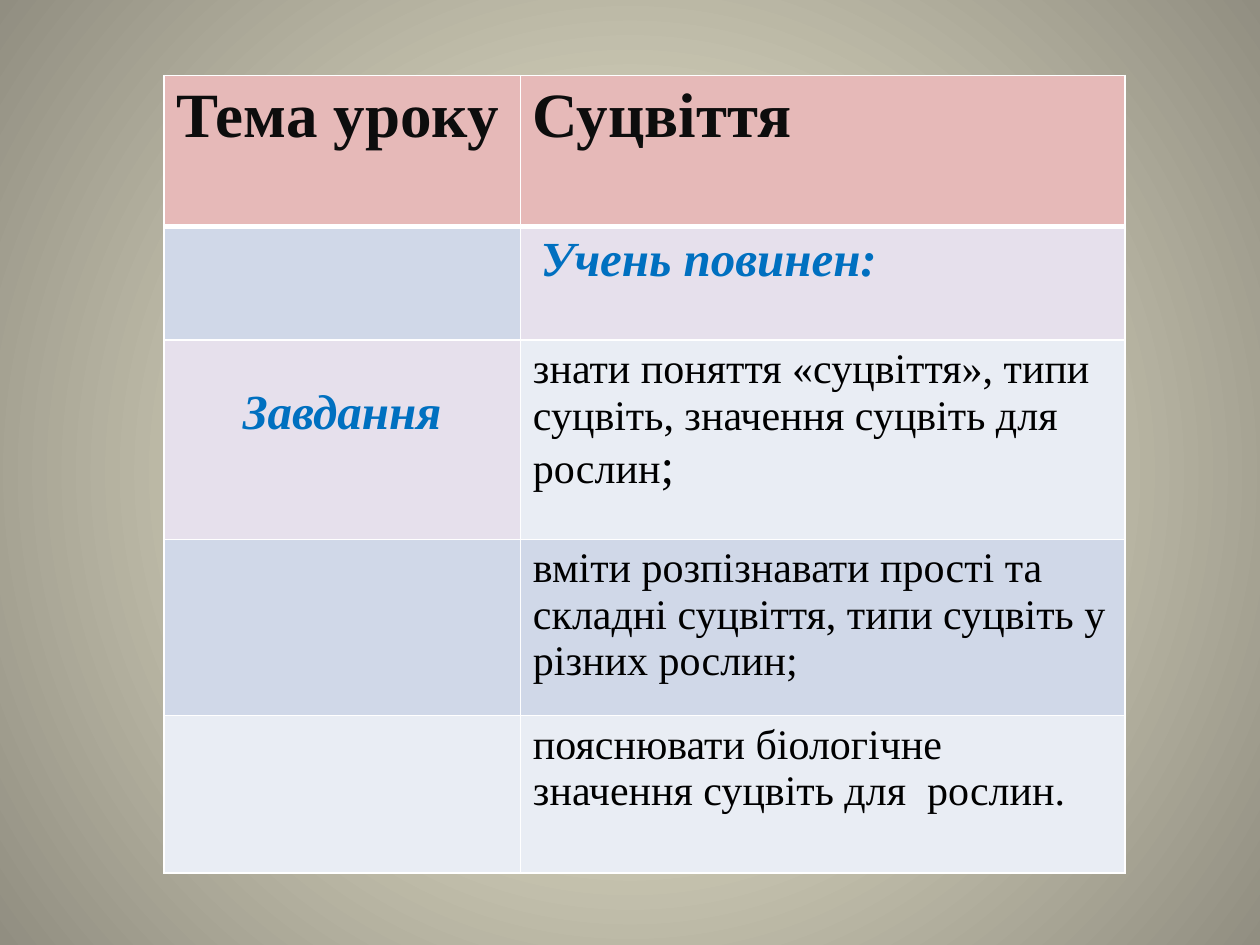
import pptx
import pptx.util
import pptx.dml.color
import pptx.enum.text
import pptx.oxml
import pptx.oxml.ns
from pptx.util import Inches


def color(value):
    return pptx.dml.color.RGBColor.from_string(value)


def add_border(cell, side, width):
    properties = cell._tc.get_or_add_tcPr()
    line = pptx.oxml.parse_xml(
        f'<a:{side} {pptx.oxml.ns.nsdecls("a")} w="{pptx.util.Pt(width)}">'
        '<a:solidFill><a:srgbClr val="FFFFFF"/></a:solidFill>'
        f'</a:{side}>')
    properties.append(line)


deck = pptx.Presentation()
deck.slide_width = Inches(10)
deck.slide_height = Inches(7.5)
page = deck.slides.add_slide(deck.slide_layouts[6])

# Background: radial gradient from the centre
background = page.background.fill
background.gradient()
for stop, position, value in zip(background.gradient_stops, (0, 1), ("FCF7DD", "918E81")):
    stop.position = position
    stop.color.rgb = color(value)
linear = page._element.find(".//" + pptx.oxml.ns.qn("a:lin"))
radial = pptx.oxml.parse_xml(
    f'<a:path {pptx.oxml.ns.nsdecls("a")} path="circle">'
    '<a:fillToRect l="50000" t="50000" r="50000" b="50000"/></a:path>')
linear.getparent().replace(linear, radial)

# Text styles: size, colour, bold, italic
TITLE = (36, "0D0D0D", True, False)
ACCENT = (28, "0070C0", True, True)
BODY = (24, "000000", False, False)
BODY_LARGE = (28, "000000", False, False)

# Each cell: fill, then its runs as (text, style)
rows = [
    [("E6B9B8", [("Тема уроку", TITLE)]), ("E6B9B8", [("Суцвіття", TITLE)])],
    [("D0D8E8", []), ("E6E0EC", [("Учень повинен:", ACCENT)])],
    [("E6E0EC", [("Завдання", ACCENT)]),
     ("E9EDF4", [("знати поняття «суцвіття», типи суцвіть, значення суцвіть для рослин", BODY),
                 (";", BODY_LARGE)])],
    [("D0D8E8", []),
     ("D0D8E8", [("вміти розпізнавати прості та складні суцвіття, типи суцвіть у різних рослин;", BODY)])],
    [("E9EDF4", []),
     ("E9EDF4", [("пояснювати біологічне значення суцвіть для  рослин.", BODY)])],
]
column_widths = [2.83, 4.8]
row_heights = [1.2, 0.9, 1.58, 1.4, 1.25]

# Lesson table
table = page.shapes.add_table(
    len(rows), len(column_widths), Inches(1.3), Inches(0.6),
    Inches(sum(column_widths)), Inches(sum(row_heights))).table
for column, width in zip(table.columns, column_widths):
    column.width = Inches(width)
for row, height in zip(table.rows, row_heights):
    row.height = Inches(height)

for row_index, row in enumerate(rows):
    for column_index, (fill, runs) in enumerate(row):
        cell = table.cell(row_index, column_index)
        for side in ("lnL", "lnR", "lnT", "lnB"):
            under_header = (row_index, side) in ((0, "lnB"), (1, "lnT"))
            add_border(cell, side, 3 if under_header else 1)
        cell.fill.solid()
        cell.fill.fore_color.rgb = color(fill)
        para = cell.text_frame.paragraphs[0]
        for text, (size, text_color, bold, italic) in runs:
            span = para.add_run()
            span.text = text
            span.font.name = "Times New Roman"
            span.font.size = pptx.util.Pt(size)
            span.font.color.rgb = color(text_color)
            span.font.bold = bold
            span.font.italic = italic

# Offsets of the two accent labels
table.cell(1, 1).margin_left = Inches(0.16)
task_cell = table.cell(2, 0)
task_cell.margin_top = Inches(0.36)
task_cell.text_frame.paragraphs[0].alignment = pptx.enum.text.PP_ALIGN.CENTER

deck.save("out.pptx")
